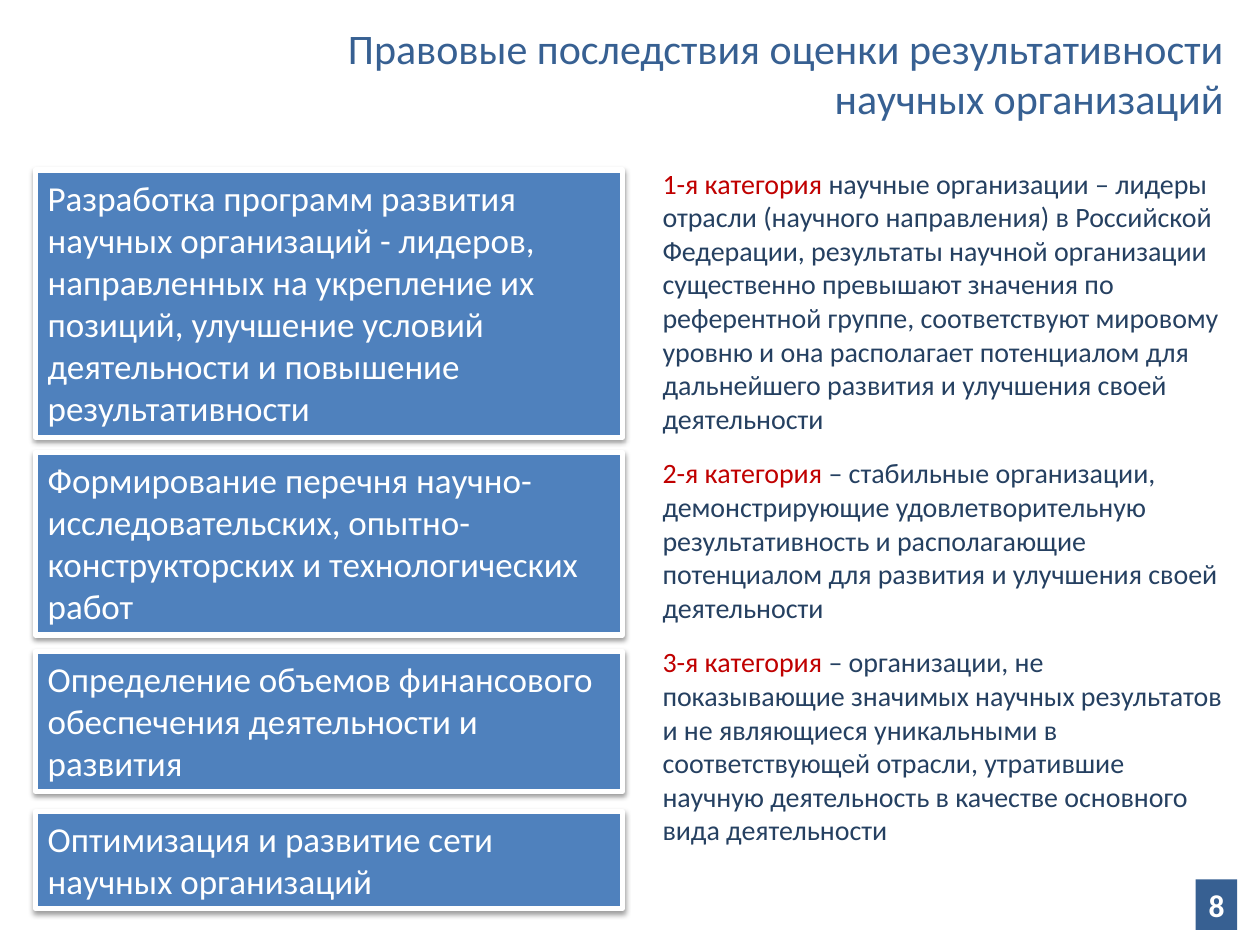
from lxml.etree import SubElement
from pptx import Presentation
from pptx.dml.color import RGBColor as RGB
from pptx.enum.shapes import MSO_SHAPE as Shape
from pptx.enum.text import MSO_ANCHOR as Anchor, PP_ALIGN as Align
from pptx.oxml.ns import qn
from pptx.util import Inches, Pt

WHITE = RGB(0xFF, 0xFF, 0xFF)
BLACK = RGB(0, 0, 0)
BLUE = RGB(0x4F, 0x81, 0xBD)
STEEL = RGB(0x37, 0x60, 0x92)
NAVY = RGB(0x25, 0x40, 0x61)
RED = RGB(0xC0, 0, 0)
FONT = "Calibri"

TITLE = "Правовые последствия оценки результативности научных организаций"

# Height of each measure box and its text
STEPS = [
    (2.12, "Разработка программ развития научных организаций - лидеров, "
           "направленных на укрепление их позиций, улучшение условий "
           "деятельности и повышение результативности"),
    (1.45, "Формирование перечня научно-исследовательских, "
           "опытно-конструкторских и технологических работ"),
    (1.11, "Определение объемов финансового обеспечения деятельности "
           "и развития"),
    (0.77, "Оптимизация и развитие сети научных организаций"),
]
TOPS = [1.35, 3.59, 5.17, 6.44]

GROUPS = [
    ("1-я категория ",
     "научные организации – лидеры отрасли (научного направления) в "
     "Российской Федерации, результаты научной организации существенно "
     "превышают значения по референтной группе, соответствуют мировому "
     "уровню и она располагает потенциалом для дальнейшего развития и "
     "улучшения своей деятельности"),
    ("2-я категория ",
     "– стабильные организации, демонстрирующие удовлетворительную "
     "результативность и располагающие потенциалом для развития и "
     "улучшения своей деятельности"),
    ("3-я категория ",
     "– организации, не показывающие значимых научных результатов и не "
     "являющиеся уникальными в соответствующей отрасли, утратившие научную "
     "деятельность в качестве основного вида деятельности"),
]


def style(para, size, color=None, bold=False, align=Align.LEFT):
    para.alignment = align
    font = para.font
    font.name, font.size, font.bold = FONT, Pt(size), bold
    if color is not None:
        font.color.rgb = color


def cast(props, blur, dist, angle, alpha):
    """Add an outer shadow to shape or run properties."""
    effects = SubElement(props, qn("a:effectLst"))
    outer = SubElement(effects, qn("a:outerShdw"), blurRad=str(Pt(blur)),
                       dist=str(Pt(dist)), dir=str(angle * 60000),
                       algn="tl", rotWithShape="0")
    color = SubElement(outer, qn("a:srgbClr"), val=str(BLACK))
    SubElement(color, qn("a:alpha"), val=str(alpha * 1000))


def add_text(slide, x, y, w, h):
    box = slide.shapes.add_textbox(Inches(x), Inches(y), Inches(w), Inches(h))
    box.text_frame.word_wrap = True
    return box.text_frame


def add_rect(slide, x, y, w, h, fill):
    rect = slide.shapes.add_shape(
        Shape.RECTANGLE, Inches(x), Inches(y), Inches(w), Inches(h))
    rect.fill.solid()
    rect.fill.fore_color.rgb = fill
    rect.text_frame.vertical_anchor = Anchor.TOP
    return rect


def add_title(slide, x, y, w, h):
    para = add_text(slide, x, y, w, h).paragraphs[0]
    style(para, 24, STEEL, align=Align.RIGHT)
    run = para.add_run()
    run.text = TITLE
    cast(run.font.fill._xPr, 3, 3, 45, 43)


def add_badge(slide, x, y, w, h):
    badge = add_rect(slide, x, y, w, h, STEEL)
    badge.line.fill.background()
    badge.shadow.inherit = False
    frame = badge.text_frame
    frame.word_wrap = False
    frame.text = "8"
    style(frame.paragraphs[0], 18, WHITE, bold=True, align=Align.CENTER)


def add_groups(slide, x, y, w, h):
    frame = add_text(slide, x, y, w, h)
    for i, (name, text) in enumerate(GROUPS):
        para = frame.add_paragraph() if i else frame.paragraphs[0]
        style(para, 16)
        para.space_before = Pt(6 if i else 0)
        para.space_after = Pt(6)
        for part, color in ((name, RED), (text, NAVY)):
            run = para.add_run()
            run.text = part
            run.font.color.rgb = color


def add_steps(slide, x, w):
    for y, (h, text) in zip(TOPS, STEPS):
        rect = add_rect(slide, x, y, w, h, BLUE)
        rect.line.color.rgb = WHITE
        rect.line.width = Pt(3)
        cast(rect._element.spPr, 3.1, 1.6, 90, 38)
        rect.text_frame.text = text
        style(rect.text_frame.paragraphs[0], 20, WHITE)


def main():
    deck = Presentation()
    deck.slide_width, deck.slide_height = Inches(10), Inches(7.5)
    slide = deck.slides.add_slide(deck.slide_layouts[6])
    add_title(slide, 2.64, 0.13, 7.17, 0.91)
    add_badge(slide, 9.49, 6.98, 0.33, 0.4)
    add_groups(slide, 5.16, 1.27, 4.65, 5.55)
    add_steps(slide, 0.28, 4.66)
    deck.save("out.pptx")


if __name__ == "__main__":
    main()
